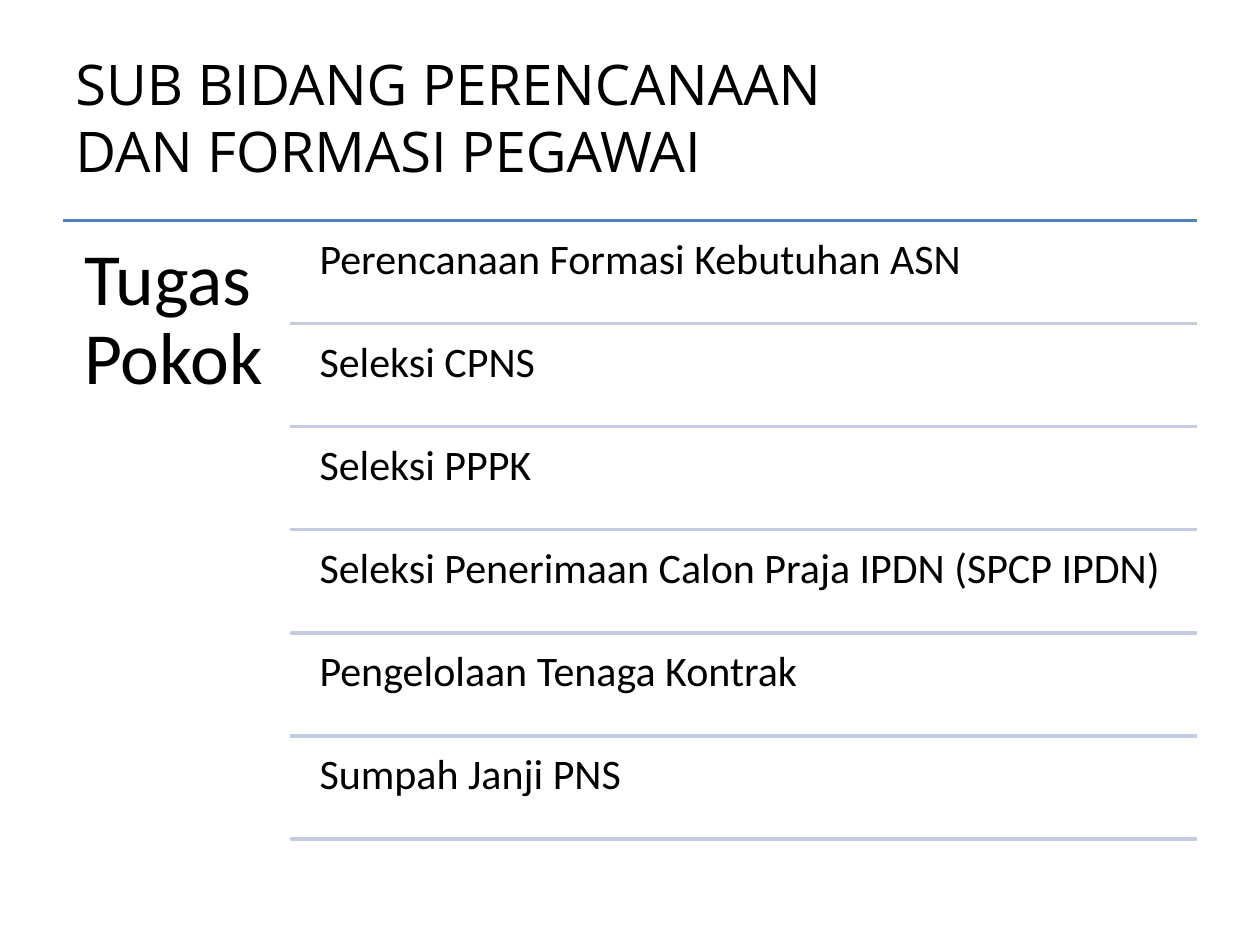
from lxml import etree
from pptx import Presentation
from pptx.dml.color import RGBColor
from pptx.enum.shapes import MSO_CONNECTOR as Conn
from pptx.enum.text import MSO_ANCHOR as Anchor
from pptx.oxml.ns import qn
from pptx.util import Pt

BLACK = RGBColor(0x00, 0x00, 0x00)
BLUE = RGBColor(0x4F, 0x81, 0xBD)
PALE_BLUE = RGBColor(0xC2, 0xCD, 0xE1)

LEFT, RIGHT = 36, 684
TOP = 126
TASK_LEFT = 165.6
TASK_TEXT_LEFT, TASK_TEXT_WIDTH = 175.5, 508.8
TASK_HEIGHT, TASK_GAP = 56.1, 2.8

TITLE = ["SUB BIDANG PERENCANAAN ", "DAN FORMASI PEGAWAI"]
TASKS = [
    "Perencanaan Formasi Kebutuhan ASN",
    "Seleksi CPNS",
    "Seleksi PPPK",
    "Seleksi Penerimaan Calon Praja IPDN (SPCP IPDN)",
    "Pengelolaan Tenaga Kontrak",
    "Sumpah Janji PNS",
]


def add_text(s, lines, x, y, w, h, size, font="Calibri", inset=7.2,
             anchor=Anchor.TOP, spacing=0.9):
    sp = s.shapes.add_textbox(Pt(x), Pt(y), Pt(w), Pt(h))
    tf = sp.text_frame
    tf.word_wrap = True
    tf.vertical_anchor = anchor
    tf.margin_left = tf.margin_right = Pt(inset)
    tf.margin_top = tf.margin_bottom = Pt(inset)
    p = tf.paragraphs[0]
    p.line_spacing = spacing
    for i, line in enumerate(lines):
        if i:
            p.add_line_break()
        r = p.add_run()
        r.text = line
        r.font.name = font
        r.font.size = Pt(size)
        r.font.color.rgb = BLACK
    return sp


def add_rule(s, x, y, color):
    line = s.shapes.add_connector(Conn.STRAIGHT, Pt(x), Pt(y), Pt(RIGHT), Pt(y))
    line.line.color.rgb = color
    line.line.width = Pt(2)
    etree.SubElement(line._element.spPr, qn("a:effectLst"))


def main():
    prs = Presentation()
    prs.slide_width, prs.slide_height = Pt(720), Pt(540)
    s = prs.slides.add_slide(prs.slide_layouts[6])

    # Title
    add_text(s, TITLE, LEFT, 21.6, RIGHT - LEFT, 90, 32, font="Open Sans",
             anchor=Anchor.MIDDLE, spacing=1.0)

    # Heading column under the main rule
    add_rule(s, LEFT, TOP, BLUE)
    add_text(s, ["Tugas Pokok"], LEFT, TOP, TASK_LEFT - LEFT, 356.4, 42, inset=12.24)

    # Tasks, each closed by a pale rule
    for i, task in enumerate(TASKS):
        y = TOP + TASK_GAP + i * (TASK_HEIGHT + TASK_GAP)
        add_text(s, [task], TASK_TEXT_LEFT, y, TASK_TEXT_WIDTH, TASK_HEIGHT, 24)
        add_rule(s, TASK_LEFT, y + TASK_HEIGHT, PALE_BLUE)

    prs.save("out.pptx")


if __name__ == "__main__":
    main()
